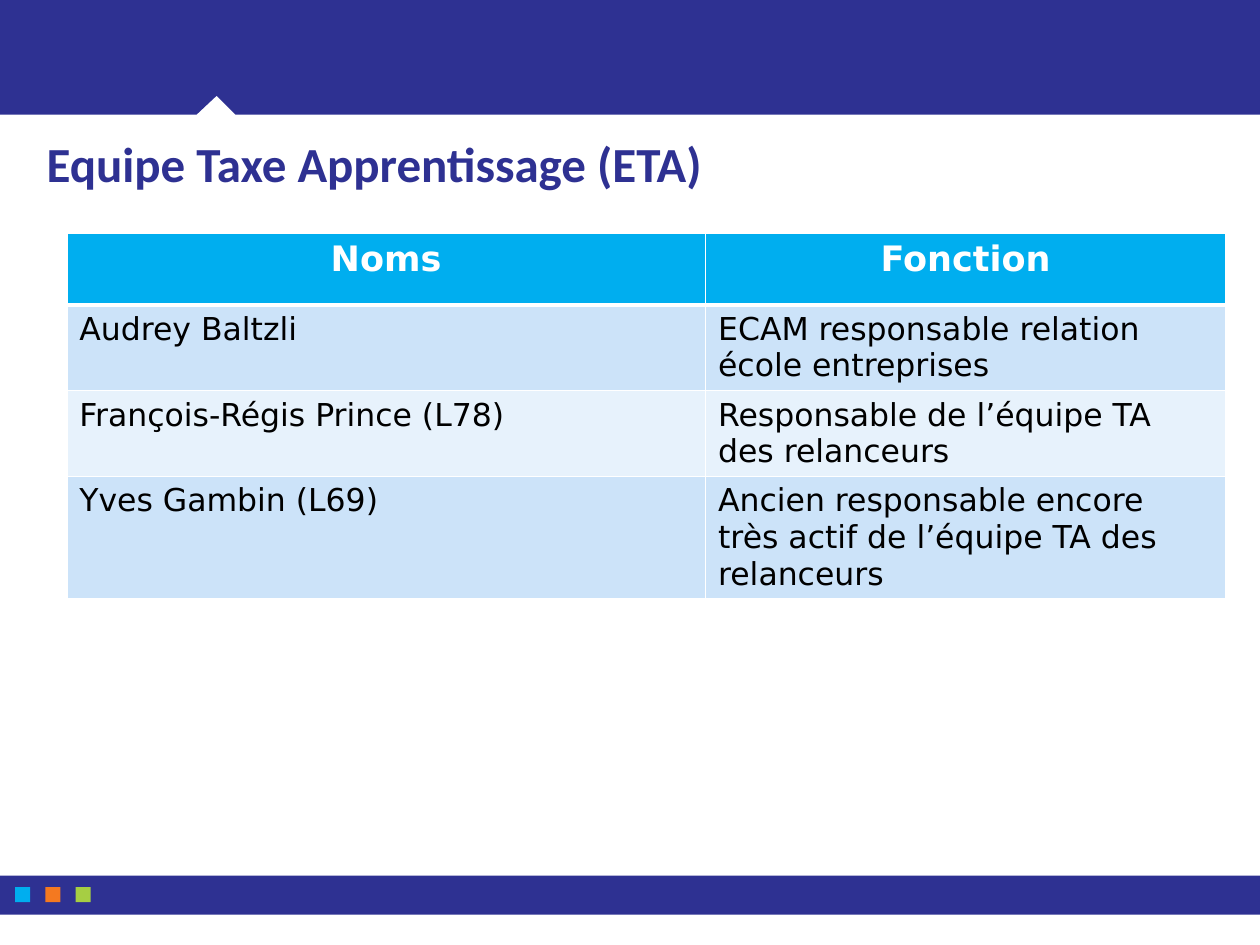
from lxml import etree
from pptx import Presentation
from pptx import util as u
from pptx.dml.color import RGBColor
from pptx.enum import shapes, text
from pptx.oxml import ns

COLORS = {"navy": "2E3192", "cyan": "00AEEF", "orange": "F47920", "green": "A6CE43",
          "white": "FFFFFF", "black": "000000", "band": "CCE3F9", "light": "E7F2FC"}
FORMATS = {
    "title": {"name": "Calibri", "size": u.Pt(28), "bold": True, "color": "navy"},
    "head": {"name": "DejaVu Sans", "size": u.Pt(20), "bold": True, "color": "white"},
    "body": {"name": "DejaVu Sans", "size": u.Pt(18), "bold": False, "color": "black"},
}
TEAM = [
    ("Noms", "Fonction"),
    ("Audrey Baltzli", "ECAM responsable relation école entreprises"),
    ("François-Régis Prince (L78)", "Responsable de l’équipe TA des relanceurs"),
    ("Yves Gambin (L69)", "Ancien responsable encore très actif de l’équipe TA des relanceurs"),
]


class Deck:
    """Slide builder on a grid of 100 columns by 75 rows."""

    def __init__(self):
        self.prs = Presentation()
        self.prs.slide_width, self.prs.slide_height = u.Inches(10), u.Inches(7.5)
        self.cell_w = self.prs.slide_width / 100
        self.cell_h = self.prs.slide_height / 75
        self.s = self.prs.slides.add_slide(self.prs.slide_layouts[5])

    def grid(self, x, y, w, h):
        return [round(v * c) for v, c in zip((x, y, w, h), (self.cell_w, self.cell_h) * 2)]

    def rgb(self, color):
        return RGBColor.from_string(COLORS[color])

    def paint(self, sp, color):
        sp.shadow.inherit = False
        sp.fill.solid()
        sp.fill.fore_color.rgb = self.rgb(color)
        sp.line.fill.background()

    def label(self, tf, words, style, align):
        p = tf.paragraphs[0]
        p.alignment = align
        r = p.add_run()
        r.text = words
        for key, value in FORMATS[style].items():
            if key == "color":
                r.font.color.rgb = self.rgb(value)
            else:
                setattr(r.font, key, value)

    def title(self, words, *area):
        sp = self.s.shapes.title
        sp.left, sp.top, sp.width, sp.height = self.grid(*area)
        tf = sp.text_frame
        tf.auto_size = text.MSO_AUTO_SIZE.NONE
        tf.vertical_anchor = text.MSO_ANCHOR.MIDDLE
        self.label(tf, words, "title", text.PP_ALIGN.LEFT)

    def rect(self, color, *area):
        sp = self.s.shapes.add_shape(shapes.MSO_SHAPE.RECTANGLE, *self.grid(*area))
        self.paint(sp, color)

    def outline(self, color, points):
        start, *rest = [self.grid(x, y, 0, 0)[:2] for x, y in points]
        fb = self.s.shapes.build_freeform(*start)
        fb.add_line_segments(rest, close=True)
        self.paint(fb.convert_to_shape(), color)

    def border(self, cell, side, color, width):
        ln = etree.SubElement(cell._tc.get_or_add_tcPr(), ns.qn(f"a:ln{side}"), w=str(u.Pt(width)))
        fill = etree.SubElement(ln, ns.qn("a:solidFill"))
        etree.SubElement(fill, ns.qn("a:srgbClr"), val=COLORS[color])

    def table(self, rows, x, y, widths, heights):
        area = self.grid(x, y, sum(widths), sum(heights))
        tbl = self.s.shapes.add_table(len(rows), len(widths), *area).table
        for col, w in zip(tbl.columns, widths):
            col.width = round(w * self.cell_w)
        for i, (row, h) in enumerate(zip(rows, heights)):
            tbl.rows[i].height = round(h * self.cell_h)
            head = i == 0
            fill = "cyan" if head else ("light", "band")[i % 2]
            for j, words in enumerate(row):
                cell = tbl.cell(i, j)
                for side in "LRTB":
                    thick = (head and side == "B") or (i == 1 and side == "T")
                    self.border(cell, side, "white", 3 if thick else 1)
                cell.fill.solid()
                cell.fill.fore_color.rgb = self.rgb(fill)
                align = text.PP_ALIGN.CENTER if head else text.PP_ALIGN.LEFT
                self.label(cell.text_frame, words, "head" if head else "body", align)


def main():
    deck = Deck()
    deck.outline("navy", [(0, 0), (100, 0), (100, 9.1), (18.7, 9.1),
                          (17.2, 7.6), (15.6, 9.1), (0, 9.1)])
    deck.rect("navy", 0, 69.5, 100, 3.1)
    for i, color in enumerate(("cyan", "orange", "green")):
        deck.rect(color, 1.2 + 2.4 * i, 70.4, 1.2, 1.2)
    deck.title("Equipe Taxe Apprentissage (ETA)", 2.7, 10.2, 94.6, 5.4)
    deck.table(TEAM, 5.3, 18.5, (50.7, 41.3), (5.7, 6.8, 6.8, 9.7))
    deck.prs.save("out.pptx")


if __name__ == "__main__":
    main()
